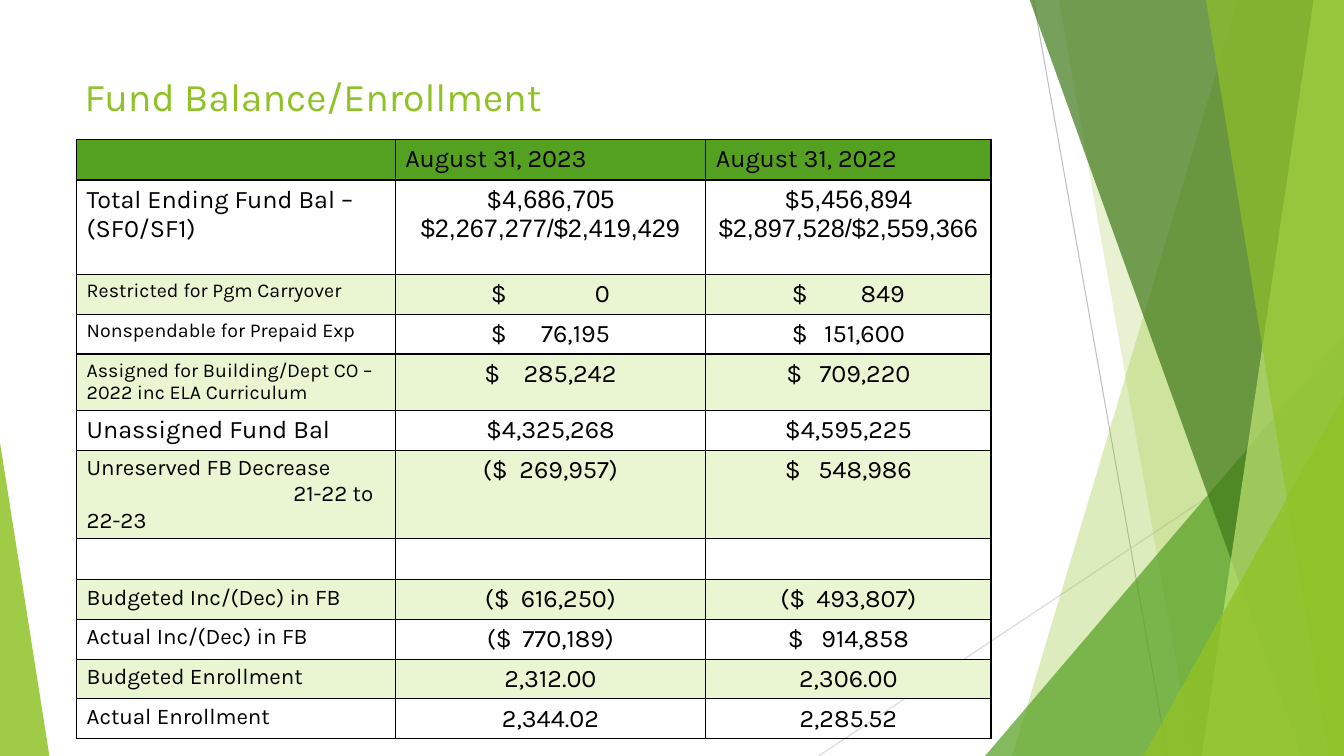
from lxml import etree
from pptx import Presentation
from pptx.dml.color import RGBColor
from pptx.enum.shapes import MSO_CONNECTOR, MSO_SHAPE
from pptx.enum.text import MSO_ANCHOR, MSO_AUTO_SIZE, PP_ALIGN
from pptx.oxml.ns import qn
from pptx.util import Inches, Pt

LIME = RGBColor(0x90, 0xC2, 0x26)
GREEN = RGBColor(0x54, 0xA0, 0x21)
FOREST = RGBColor(0x3F, 0x78, 0x19)
PALE_LIME = RGBColor(0xC0, 0xE4, 0x74)
BAND = RGBColor(0xEA, 0xF6, 0xD1)
BLACK = RGBColor(0, 0, 0)
GREY = RGBColor(0xBF, 0xBF, 0xBF)
LIGHT_GREY = RGBColor(0xD9, 0xD9, 0xD9)

WIDTH, HEIGHT, TOP = 13.33, 7.5, -0.01
COLUMNS = [3.16, 3.08, 2.83]
ROW_HEIGHT = 0.39
INSET = 0.1

# Left and right x of the top edge, then of the bottom edge, colour, opacity.
RIBBONS = [
    (12.28, 10.04, LIME, 30),
    (10.5, 11.83, LIME, 20),
    (10.21, 12.91, FOREST, 70),
    (13.03, 11.92, PALE_LIME, 70),
    (11.96, 13.18, LIME, 65),
]

# Label, label size, row height, then one value per year.
# A pair is an amount split at a tab, with the width it spans in inches.
ROWS = [
    ("Restricted for Pgm Carryover", 14, ROW_HEIGHT, ("$\t0", 1.18), ("$\t849", 1.12)),
    ("Nonspendable for Prepaid Exp", 14, ROW_HEIGHT, ("$\t76,195", 1.18), ("$\t151,600", 1.12)),
    ("Assigned for Building/Dept CO – 2022 inc ELA Curriculum", 14, 0.56,
     ("$\t285,242", 1.31), ("$\t709,220", 1.23)),
    ("Unassigned Fund Bal", 18, ROW_HEIGHT, "$4,325,268", "$4,595,225"),
    ("Unreserved FB Decrease", 16, 0.63, ("($\t269,957)", 1.34), ("$\t548,986", 1.26)),
    ("", 18, ROW_HEIGHT, "", ""),
    ("Budgeted Inc/(Dec) in FB", 16, ROW_HEIGHT, ("($\t616,250)", 1.3), ("($\t493,807)", 1.35)),
    ("Actual Inc/(Dec) in FB", 16, ROW_HEIGHT, ("($\t770,189)", 1.26), ("$\t914,858", 1.2)),
    ("Budgeted Enrollment", 16, ROW_HEIGHT, "2,312.00", "2,306.00"),
    ("Actual Enrollment", 16, ROW_HEIGHT, "2,344.02", "2,285.52"),
]
TOTALS = [("4,686,705", "$2,267,277/$2,419,429"), ("5,456,894", "$2,897,528/$2,559,366")]


class SlideBuilder:
    def __init__(self, slide, font="Karla"):
        self.s = slide
        self.font = font

    def run(self, p, text, size=18, color=BLACK, font=None):
        r = p.add_run()
        r.text = text
        r.font.name = font or self.font
        r.font.size = Pt(size)
        r.font.color.rgb = color

    def line(self, start, end, color):
        ends = [Inches(v) for v in (*start, *end)]
        cx = self.s.shapes.add_connector(MSO_CONNECTOR.STRAIGHT, *ends)
        cx.line.color.rgb = color
        cx.line.width = Pt(0.75)
        etree.SubElement(cx._element.spPr, qn("a:effectLst"))

    def paint(self, sp, color, opacity):
        """Give a shape a see-through fill with no line or shadow."""
        sp.shadow.inherit = False
        sp.line.fill.background()
        sp.fill.solid()
        sp.fill.fore_color.rgb = color
        clr = sp._element.spPr.find(qn("a:solidFill")).find(qn("a:srgbClr"))
        etree.SubElement(clr, qn("a:alpha"), val=str(opacity * 1000))

    def ribbon(self, top_x, bottom_x, color, opacity):
        """Draw a band from a slanted left edge to the slide's right edge."""
        corners = [(WIDTH, TOP), (WIDTH, HEIGHT), (bottom_x, HEIGHT)]
        fb = self.s.shapes.build_freeform(Inches(top_x), Inches(TOP))
        fb.add_line_segments([(Inches(x), Inches(y)) for x, y in corners], close=True)
        self.paint(fb.convert_to_shape(), color, opacity)

    def triangle(self, left, top, width, apex, color, opacity):
        """Draw a triangle standing on the slide's bottom edge."""
        sp = self.s.shapes.add_shape(MSO_SHAPE.ISOSCELES_TRIANGLE, Inches(left), Inches(top),
                                     Inches(width), Inches(HEIGHT - top))
        sp.adjustments[0] = apex
        self.paint(sp, color, opacity)

    def title(self, text):
        sp = self.s.shapes.title
        sp.left, sp.top, sp.width, sp.height = (Inches(v) for v in (0.74, 0.67, 9.4, 0.56))
        tf = sp.text_frame
        tf.word_wrap = True
        tf.auto_size = MSO_AUTO_SIZE.NONE
        tf.vertical_anchor = MSO_ANCHOR.MIDDLE
        p = tf.paragraphs[0]
        p.alignment = PP_ALIGN.LEFT
        self.run(p, text, 28, LIME)

    def table(self, left, top, heights):
        tbl = self.s.shapes.add_table(len(heights), len(COLUMNS), Inches(left), Inches(top),
                                      Inches(sum(COLUMNS)), Inches(sum(heights))).table
        tbl.first_row = tbl.horz_banding = False
        for col, width in zip(tbl.columns, COLUMNS):
            col.width = Inches(width)
        for i, (row, height) in enumerate(zip(tbl.rows, heights)):
            row.height = Inches(height)
            for cell in row.cells:
                self.style_cell(cell, GREEN if i == 0 else BAND if i % 2 == 0 else None)
        return tbl

    def style_cell(self, cell, color):
        tc_pr = cell._tc.get_or_add_tcPr()
        for side in ("lnL", "lnR", "lnT", "lnB"):
            ln = etree.SubElement(tc_pr, qn("a:" + side), w=str(Pt(1)))
            fill = etree.SubElement(ln, qn("a:solidFill"))
            etree.SubElement(fill, qn("a:srgbClr"), val=str(BLACK))
        if color is None:
            cell.fill.background()
        else:
            cell.fill.solid()
            cell.fill.fore_color.rgb = color

    def value(self, cell, value, column_width):
        """Centre a value; a tabbed amount is set between two centred edges."""
        p = cell.text_frame.paragraphs[0]
        if isinstance(value, str):
            p.alignment = PP_ALIGN.CENTER
            if value:
                self.run(p, value)
            return
        text, span = value
        cell.margin_left = Inches((column_width - span) / 2)
        p.alignment = PP_ALIGN.LEFT
        tabs = etree.SubElement(p._p.get_or_add_pPr(), qn("a:tabLst"))
        etree.SubElement(tabs, qn("a:tab"), pos=str(Inches(span)), algn="r")
        self.run(p, text)


def main():
    prs = Presentation()
    prs.slide_width, prs.slide_height = Inches(WIDTH), Inches(HEIGHT)
    b = SlideBuilder(prs.slides.add_slide(prs.slide_layouts[5]))

    b.line((10.25, 0), (11.58, HEIGHT), GREY)
    b.line((WIDTH, 4.03), (8.12, HEIGHT), LIGHT_GREY)
    for ribbon in RIBBONS[:2]:
        b.ribbon(*ribbon)
    b.triangle(9.77, 3.33, 3.56, 1, GREEN, 72)
    for ribbon in RIBBONS[2:]:
        b.ribbon(*ribbon)
    b.triangle(11.34, 3.93, 1.99, 1, LIME, 80)
    b.triangle(0, 4.39, 0.49, 0, LIME, 85)

    b.title("Fund Balance/Enrollment")

    tbl = b.table(0.76, 1.38, [ROW_HEIGHT, 0.94] + [row[2] for row in ROWS])
    for c, year in enumerate(("2023", "2022"), 1):
        b.run(tbl.cell(0, c).text_frame.paragraphs[0], f"August 31, {year}")

    b.run(tbl.cell(1, 0).text_frame.paragraphs[0], "Total Ending Fund Bal – (SF0/SF1)")
    for c, (total, split) in enumerate(TOTALS, 1):
        tf = tbl.cell(1, c).text_frame
        p = tf.paragraphs[0]
        b.run(p, "$")
        b.run(p, total, font="Arial")
        b.run(tf.add_paragraph(), split, font="Arial")
        for p in tf.paragraphs:
            p.alignment = PP_ALIGN.CENTER

    for i, (label, size, _, *values) in enumerate(ROWS, 2):
        tf = tbl.cell(i, 0).text_frame
        if label:
            b.run(tf.paragraphs[0], label, size)
        if label.startswith("Unreserved"):
            p = tf.add_paragraph()
            p._p.get_or_add_pPr().set("indent", str(Inches(2.05)))
            b.run(p, "21-22 to 22-23", size)
        for c, value in enumerate(values, 1):
            b.value(tbl.cell(i, c), value, COLUMNS[c])

    prs.save("out.pptx")


if __name__ == "__main__":
    main()
